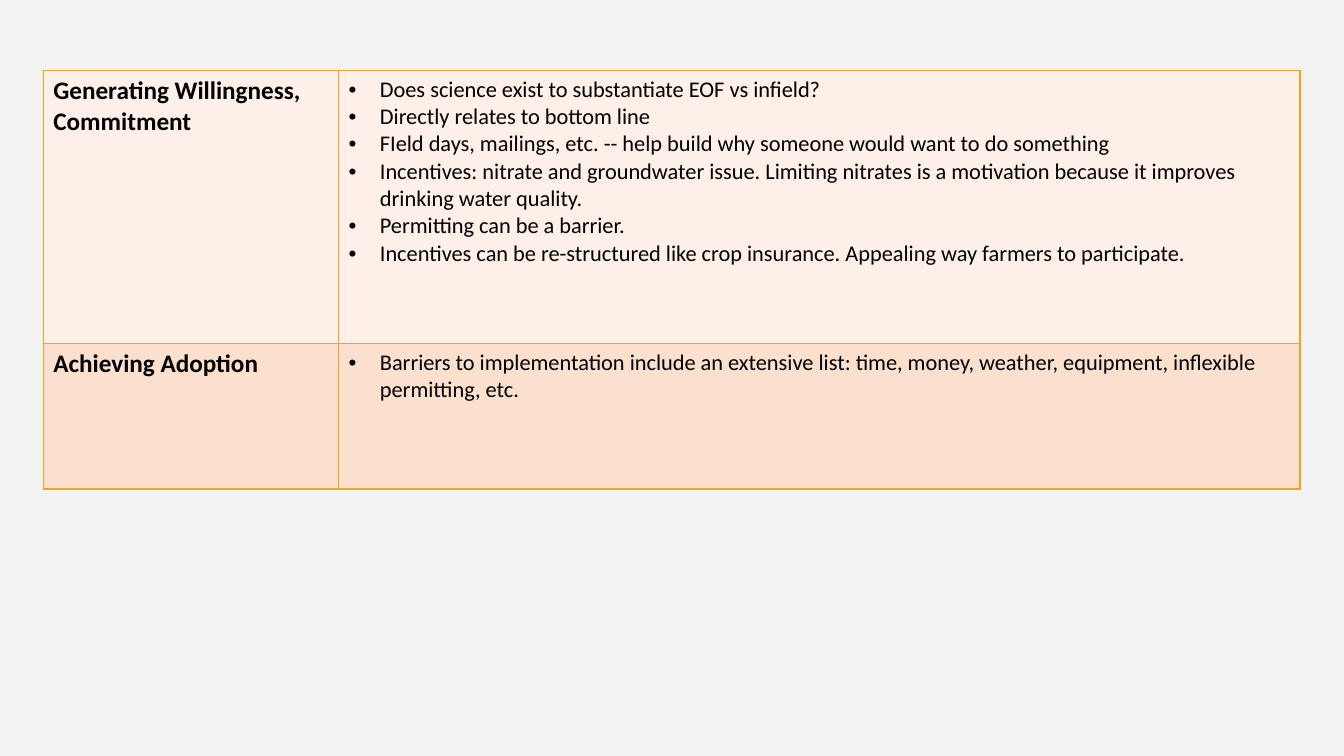
from dataclasses import dataclass

from lxml.etree import SubElement
from pptx import Presentation
from pptx.dml.color import RGBColor as Rgb
from pptx.oxml import parse_xml
from pptx.oxml.ns import nsdecls, qn
from pptx.util import Cm, Pt


@dataclass(frozen=True)
class Theme:
    font: str = "Calibri"
    bullet_font: str = "Arial"
    background: str = "F2F2F2"
    text: str = "000000"
    border: str = "F6A21D"
    row_fills: tuple = ("FDF0E8", "FBE0CD")
    heading_size: int = 18
    body_size: int = 16
    border_width: int = 1
    bullet_indent: float = 0.79


class SlideBuilder:
    """Build styled elements on one slide."""

    def __init__(self, presentation, theme):
        self.theme = theme
        self.slide = presentation.slides.add_slide(presentation.slide_layouts[6])
        fill = self.slide.background.fill
        fill.solid()
        fill.fore_color.rgb = Rgb.from_string(theme.background)

    def add_topic_table(self, left, top, widths, heights, topics):
        frame = self.slide.shapes.add_table(
            len(topics), len(widths), Cm(left), Cm(top), Cm(sum(widths)), Cm(sum(heights))
        )
        table = frame.table
        table.first_row = False
        table.horz_banding = False
        for column, width in zip(table.columns, widths):
            column.width = Cm(width)
        for row, height, fill, (heading, points) in zip(
            table.rows, heights, self.theme.row_fills, topics
        ):
            row.height = Cm(height)
            heading_cell, points_cell = row.cells
            self.fill_cell(heading_cell, [heading], fill, self.theme.heading_size, bold=True)
            self.fill_cell(points_cell, points, fill, self.theme.body_size)
            for paragraph in points_cell.text_frame.paragraphs:
                self.add_bullet(paragraph)

    def fill_cell(self, cell, lines, fill, size, bold=False):
        cell.fill.solid()
        cell.fill.fore_color.rgb = Rgb.from_string(fill)
        self.add_borders(cell)
        cell.text_frame.text = "\n".join(lines)
        for paragraph in cell.text_frame.paragraphs:
            for run in paragraph.runs:
                run.font.name = self.theme.font
                run.font.size = Pt(size)
                run.font.bold = bold
                run.font.color.rgb = Rgb.from_string(self.theme.text)

    def add_borders(self, cell):
        properties = cell._tc.get_or_add_tcPr()
        for position, side in enumerate(("lnL", "lnR", "lnT", "lnB")):
            line = parse_xml(
                f'<a:{side} {nsdecls("a")} w="{Pt(self.theme.border_width)}">'
                f'<a:solidFill><a:srgbClr val="{self.theme.border}"/></a:solidFill>'
                f"</a:{side}>"
            )
            properties.insert(position, line)

    def add_bullet(self, paragraph):
        properties = paragraph._p.get_or_add_pPr()
        indent = Cm(self.theme.bullet_indent)
        properties.set("marL", str(indent))
        properties.set("indent", str(-indent))
        SubElement(properties, qn("a:buFont"), typeface=self.theme.bullet_font)
        SubElement(properties, qn("a:buChar"), char="•")


def main():
    presentation = Presentation()
    presentation.slide_width = Cm(33.87)
    presentation.slide_height = Cm(19.05)
    topics = [
        (
            "Generating Willingness, Commitment",
            [
                "Does science exist to substantiate EOF vs infield?",
                "Directly relates to bottom line",
                "FIeld days, mailings, etc. -- help build why someone would want to do something",
                "Incentives: nitrate and groundwater issue. Limiting nitrates is a motivation "
                "because it improves drinking water quality.",
                "Permitting can be a barrier.",
                "Incentives can be re-structured like crop insurance. "
                "Appealing way farmers to participate.",
            ],
        ),
        (
            "Achieving Adoption",
            [
                "Barriers to implementation include an extensive list: time, money, weather, "
                "equipment, inflexible permitting, etc.",
            ],
        ),
    ]
    builder = SlideBuilder(presentation, Theme())
    builder.add_topic_table(1.09, 1.78, (7.44, 24.23), (6.88, 3.66), topics)
    presentation.save("out.pptx")


if __name__ == "__main__":
    main()
